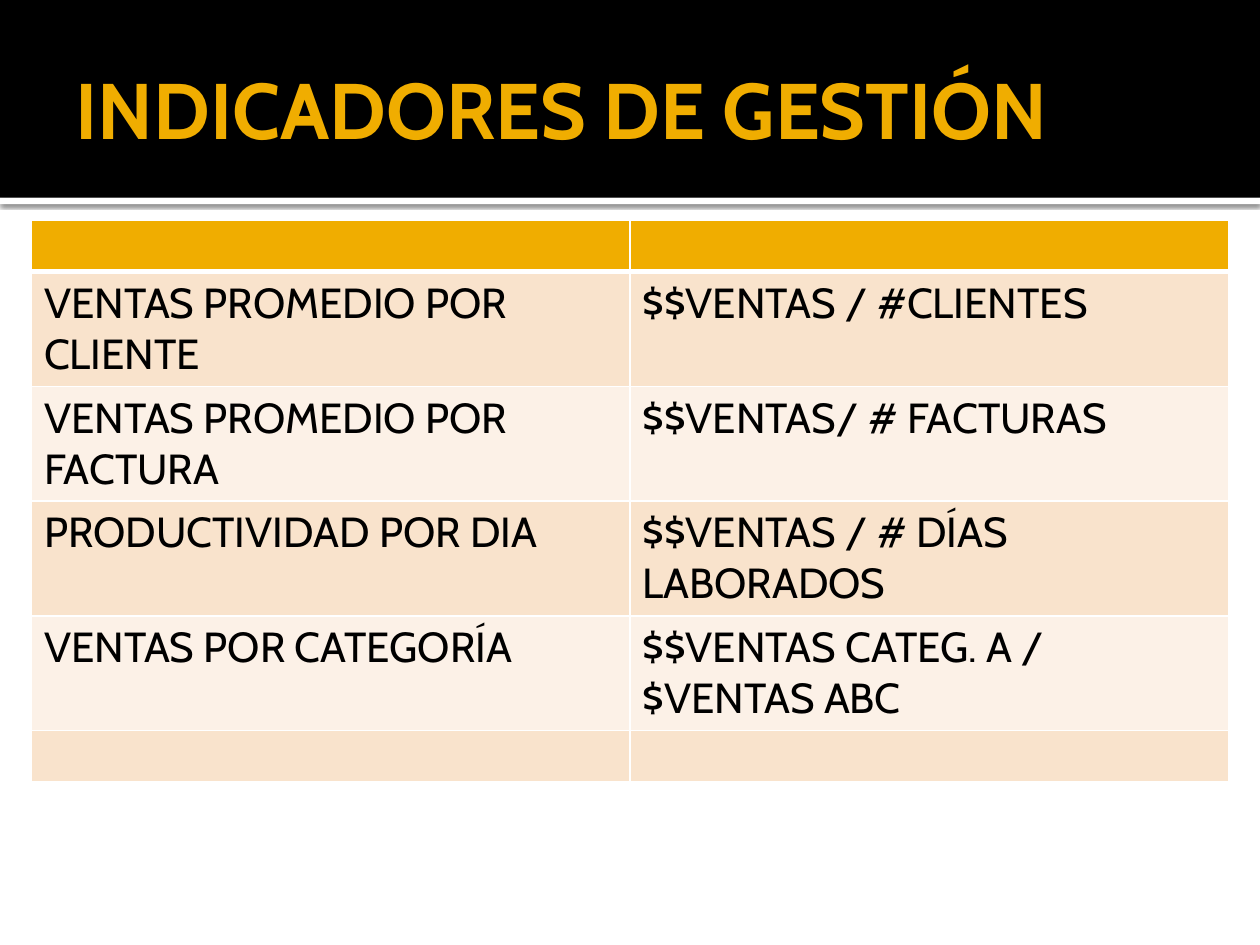
from dataclasses import dataclass

from lxml import etree
from pptx import Presentation
from pptx.dml.color import RGBColor
from pptx.enum import shapes, text
from pptx.oxml import ns
from pptx.util import Inches, Pt


@dataclass(frozen=True)
class Theme:
    font: str = "Cabin"
    accent: str = "F0AD00"
    black: str = "000000"
    white: str = "FFFFFF"
    bands: tuple = ("F9E3CC", "FCF1E7")
    title_size: float = 45
    body_size: float = 24
    empty_size: float = 18
    line: float = 1
    header_line: float = 3


THEME = Theme()
INDICATORS = [
    ("", ""),
    ("VENTAS PROMEDIO POR CLIENTE", "$$VENTAS / #CLIENTES"),
    ("VENTAS PROMEDIO POR FACTURA", "$$VENTAS/ # FACTURAS"),
    ("PRODUCTIVIDAD POR DIA", "$$VENTAS / # DÍAS LABORADOS"),
    ("VENTAS POR CATEGORÍA", "$$VENTAS CATEG. A / $VENTAS ABC"),
    ("", ""),
]


def rgb(color):
    return RGBColor.from_string(color)


def style_font(font, size, color, bold=False):
    font.name = THEME.font
    font.size = Pt(size)
    font.color.rgb = rgb(color)
    font.bold = bold


def add_band(page, box, color):
    band = page.shapes.add_shape(shapes.MSO_SHAPE.RECTANGLE, *box)
    band.shadow.inherit = False
    band.fill.solid()
    band.fill.fore_color.rgb = rgb(color)
    band.line.fill.background()
    return band


def add_shadow(shape):
    effects = shape.element.spPr.find(ns.qn("a:effectLst"))
    shadow = etree.SubElement(effects, ns.qn("a:outerShdw"), blurRad=str(Pt(2.5)),
                              dist=str(Pt(0.8)), dir="5400000", rotWithShape="0")
    color = etree.SubElement(shadow, ns.qn("a:srgbClr"), val=THEME.black)
    etree.SubElement(color, ns.qn("a:alpha"), val="60000")


def add_header(page, box, title_text):
    left, top, width, height = box
    add_shadow(add_band(page, (left, top + height, width, Inches(0.05)), THEME.white))
    band = add_band(page, box, THEME.black)

    title = page.shapes.title
    band.element.addnext(title.element)
    title.left, title.top = left + Inches(0.5), top + Inches(0.17)
    title.width, title.height = width - Inches(1), Inches(1.37)
    frame = title.text_frame
    frame.text = title_text
    frame.word_wrap = True
    frame.auto_size = text.MSO_AUTO_SIZE.NONE
    frame.vertical_anchor = text.MSO_ANCHOR.MIDDLE
    frame.margin_left = Inches(0.1)
    frame.margin_right = frame.margin_top = frame.margin_bottom = Inches(0.05)
    para = frame.paragraphs[0]
    para.alignment = text.PP_ALIGN.LEFT
    style_font(para.runs[0].font, THEME.title_size, THEME.accent, True)


def set_borders(cell, widths):
    properties = cell._tc.get_or_add_tcPr()
    for index, (side, width) in enumerate(widths.items()):
        line = etree.Element(ns.qn(f"a:ln{side}"), w=str(Pt(width)))
        fill = etree.SubElement(line, ns.qn("a:solidFill"))
        etree.SubElement(fill, ns.qn("a:srgbClr"), val=THEME.white)
        properties.insert(index, line)


def fill_cell(cell, content, row):
    cell.fill.solid()
    cell.fill.fore_color.rgb = rgb(THEME.bands[(row - 1) % 2] if row else THEME.accent)
    widths = dict.fromkeys("LRTB", THEME.line)
    if row < 2:
        widths["T" if row else "B"] = THEME.header_line
    set_borders(cell, widths)
    cell.text_frame.text = content
    para = cell.text_frame.paragraphs[0]
    style_font(para.font, THEME.body_size if content else THEME.empty_size, THEME.black)
    for span in para.runs:
        style_font(span.font, THEME.body_size, THEME.black)


def add_indicators(page, box, records):
    table = page.shapes.add_table(len(records), len(records[0]), *box).table
    for row, record in enumerate(records):
        table.rows[row].height = Inches(0.91 if any(record) else 0.4)
        for column, content in enumerate(record):
            fill_cell(table.cell(row, column), content, row)


def main():
    deck = Presentation()
    deck.slide_width, deck.slide_height = Inches(10), Inches(7.5)
    page = deck.slides.add_slide(deck.slide_layouts.get_by_name("Title Only"))
    add_header(page, (0, 0, deck.slide_width, Inches(1.57)), "INDICADORES DE GESTIÓN")
    add_indicators(page, (Inches(0.25), Inches(1.75), Inches(9.5), Inches(4.44)), INDICATORS)
    deck.save("out.pptx")


if __name__ == "__main__":
    main()
